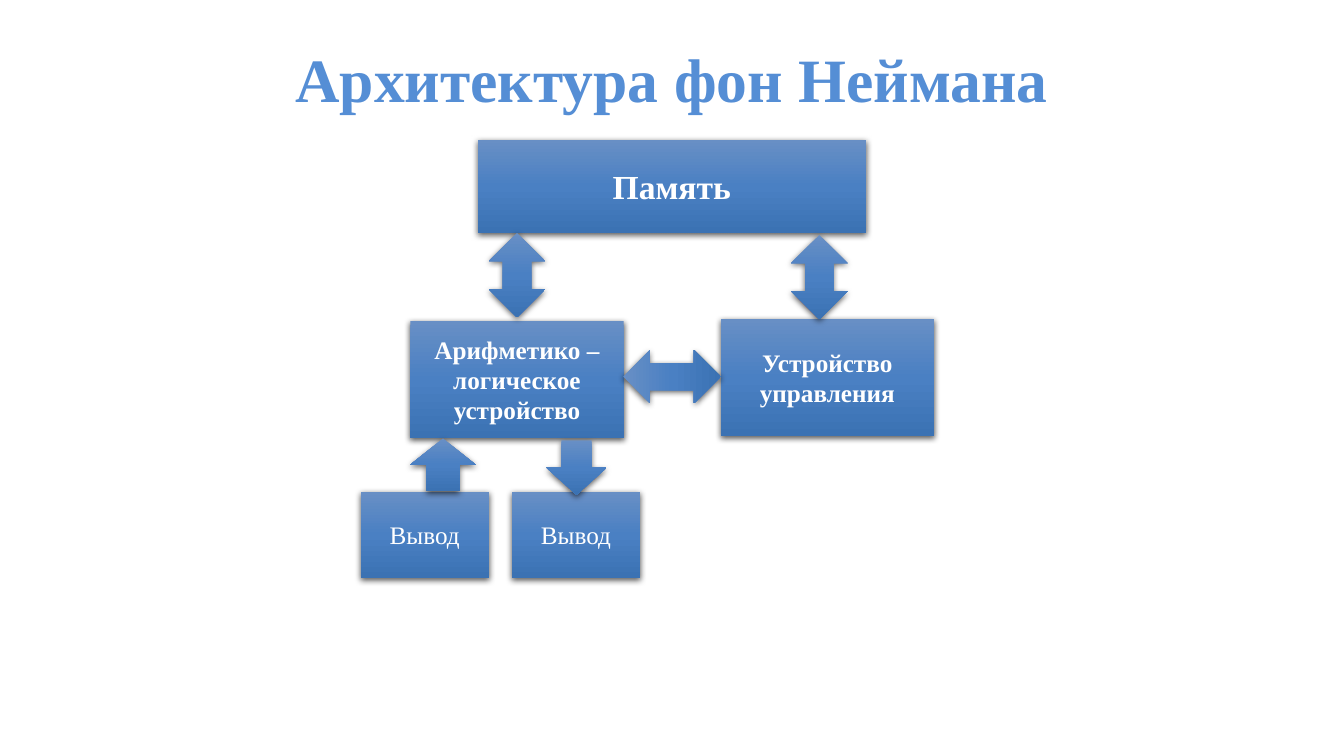
from copy import deepcopy
from dataclasses import dataclass

from lxml.etree import SubElement
from pptx import Presentation
from pptx.dml.color import RGBColor
from pptx.enum.shapes import MSO_SHAPE as Preset
from pptx.enum.text import MSO_ANCHOR as Anchor, PP_ALIGN as Align
from pptx.oxml.ns import qn
from pptx.shapes.autoshape import Shape
from pptx.slide import Slide
from pptx.text.text import TextFrame
from pptx.util import Cm, Pt

FONT = "Times New Roman"
TITLE_BLUE = RGBColor(0x55, 0x8E, 0xD5)
WHITE = RGBColor(0xFF, 0xFF, 0xFF)
GRADIENT = (
    (0, RGBColor(0x68, 0x8F, 0xC5)),
    (0.5, RGBColor(0x4A, 0x80, 0xC3)),
    (1, RGBColor(0x3B, 0x72, 0xB3)),
)


@dataclass(frozen=True)
class Block:
    text: str
    left: float
    top: float
    width: float
    height: float
    size: int = 18
    bold: bool = True


@dataclass(frozen=True)
class Arrow:
    preset: Preset
    left: float
    top: float
    width: float
    height: float
    rotation: int = 0


UNIT_SIZE = (5.38, 2.97)
OUTPUT_SIZE = (3.23, 2.16)
LINK_SIZE = (1.42, 2.13)

BLOCKS = (
    Block("Память", 12.04, 3.53, 9.78, 2.34, size=24),
    Block("Арифметико –логическое устройство", 10.34, 8.08, *UNIT_SIZE),
    Block("Устройство управления", 18.16, 8.03, *UNIT_SIZE),
    Block("Вывод", 12.9, 12.4, *OUTPUT_SIZE, bold=False),
    Block("Вывод", 9.09, 12.4, *OUTPUT_SIZE, bold=False),
)

ARROWS = (
    Arrow(Preset.UP_DOWN_ARROW, 12.32, 5.87, *LINK_SIZE),
    Arrow(Preset.UP_DOWN_ARROW, 19.94, 5.92, *LINK_SIZE),
    Arrow(Preset.UP_DOWN_ARROW, 16.26, 8.26, 1.35, 2.46, rotation=270),
    Arrow(Preset.DOWN_ARROW, 13.77, 11.1, 1.52, 1.37),
    Arrow(Preset.UP_ARROW, 10.34, 11.05, 1.65, 1.32),
)


def write_text(frame: TextFrame, text: str, size: int, color: RGBColor, bold: bool) -> None:
    frame.word_wrap = True
    paragraph = frame.paragraphs[0]
    paragraph.alignment = Align.CENTER
    run = paragraph.add_run()
    run.text = text
    run.font.name = FONT
    run.font.size = Pt(size)
    run.font.bold = bold
    run.font.color.rgb = color


def apply_gradient(shape: Shape) -> None:
    shape.fill.gradient()
    shape.fill.gradient_angle = 270
    stop_list = shape._element.spPr.find(qn("a:gradFill")).find(qn("a:gsLst"))
    stop_list.insert(1, deepcopy(stop_list[0]))
    for stop, (position, color) in zip(shape.fill.gradient_stops, GRADIENT):
        stop.position = position
        stop.color.rgb = color


def apply_shadow(shape: Shape) -> None:
    shape.shadow.inherit = False
    effects = shape._element.spPr.find(qn("a:effectLst"))
    shadow = SubElement(
        effects, qn("a:outerShdw"), blurRad=str(Pt(4.5)), dist=str(Pt(1.5)),
        dir="5400000", algn="ctr", rotWithShape="0",
    )
    color = SubElement(shadow, qn("a:srgbClr"), val="000000")
    SubElement(color, qn("a:alpha"), val="63000")


def add_glossy_shape(slide: Slide, preset: Preset, item: Block | Arrow) -> Shape:
    shape = slide.shapes.add_shape(
        preset, Cm(item.left), Cm(item.top), Cm(item.width), Cm(item.height)
    )
    apply_gradient(shape)
    shape.line.fill.background()
    apply_shadow(shape)
    return shape


def add_block(slide: Slide, block: Block) -> None:
    shape = add_glossy_shape(slide, Preset.RECTANGLE, block)
    shape.text_frame.vertical_anchor = Anchor.MIDDLE
    write_text(shape.text_frame, block.text, block.size, WHITE, block.bold)


def add_arrow(slide: Slide, arrow: Arrow) -> None:
    shape = add_glossy_shape(slide, arrow.preset, arrow)
    shape.rotation = arrow.rotation


def format_title(slide: Slide) -> None:
    title = slide.shapes.title
    title.left, title.top = Cm(2.33), Cm(1.01)
    title.width, title.height = Cm(29.21), Cm(3.68)
    frame = title.text_frame
    frame.vertical_anchor = Anchor.TOP
    frame.margin_top = Cm(0.23)
    write_text(frame, "Архитектура фон Неймана", 44, TITLE_BLUE, True)
    frame.paragraphs[0].line_spacing = 0.9


def main() -> None:
    presentation = Presentation()
    presentation.slide_width = Cm(33.87)
    presentation.slide_height = Cm(19.05)
    slide = presentation.slides.add_slide(presentation.slide_layouts[5])
    format_title(slide)
    for block in BLOCKS:
        add_block(slide, block)
    for arrow in ARROWS:
        add_arrow(slide, arrow)
    presentation.save("out.pptx")


if __name__ == "__main__":
    main()
